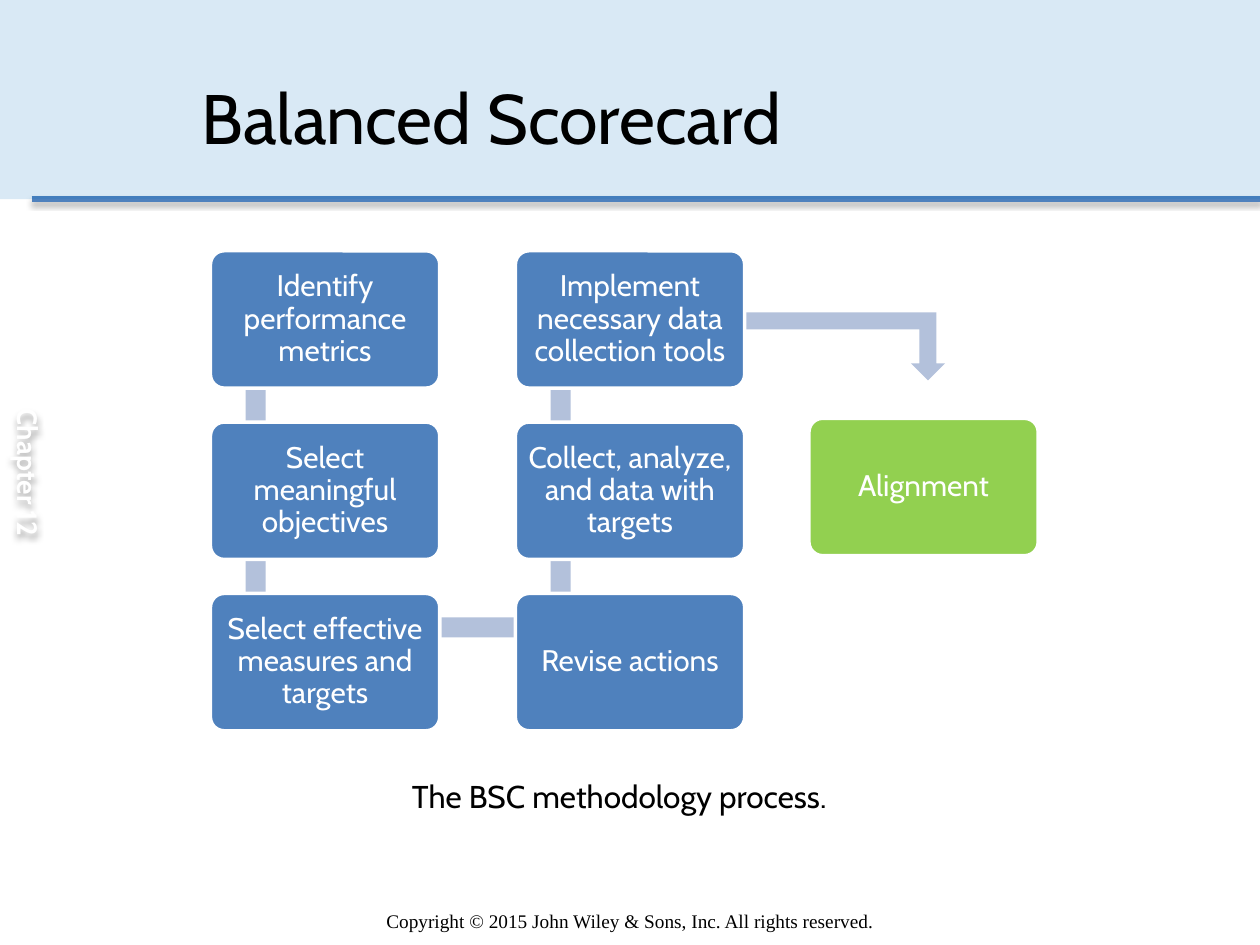
from dataclasses import dataclass

from lxml import etree
from pptx import Presentation
from pptx.dml.color import RGBColor
from pptx.enum import shapes, text
from pptx.oxml import ns
from pptx.util import Inches, Pt


@dataclass(frozen=True)
class Theme:
    font: str = "Cabin"
    footer_font: str = "Times New Roman"
    black: str = "000000"
    white: str = "FFFFFF"
    header: str = "0070C0"
    blue: str = "4F81BD"
    green: str = "92D050"
    link: str = "B3C1DB"
    title_size: float = 40
    caption_size: float = 18
    step_size: float = 17
    chapter_size: float = 16
    footer_size: float = 11


def add_shadow(shape, blur, distance, opacity):
    """Give the shape a black shadow that falls straight down."""
    effects = etree.SubElement(shape._element.spPr, ns.qn("a:effectLst"))
    outer = etree.SubElement(effects, ns.qn("a:outerShdw"), blurRad=str(Pt(blur)),
                             dist=str(Pt(distance)), dir="5400000",
                             algn="ctr", rotWithShape="0")
    color = etree.SubElement(outer, ns.qn("a:srgbClr"), val="000000")
    etree.SubElement(color, ns.qn("a:alpha"), val=str(opacity * 1000))


class SlideBuilder:
    def __init__(self, slide, theme):
        self.slide = slide
        self.theme = theme

    def set_words(self, shape, words, size, color, align, font=None, bold=False):
        frame = shape.text_frame
        frame.word_wrap = True
        frame.text = words
        paragraph = frame.paragraphs[0]
        paragraph.alignment = align
        run_font = paragraph.runs[0].font
        run_font.name = font or self.theme.font
        run_font.size = Pt(size)
        run_font.bold = bold
        run_font.color.rgb = RGBColor.from_string(color)
        return frame

    def label(self, box, words, size, color=None, align=text.PP_ALIGN.CENTER, **style):
        label = self.slide.shapes.add_textbox(*map(Inches, box))
        self.set_words(label, words, size, color or self.theme.black, align, **style)
        return label

    def block(self, box, color, kind=shapes.MSO_SHAPE.RECTANGLE):
        block = self.slide.shapes.add_shape(kind, *map(Inches, box))
        block.shadow.inherit = False
        block.fill.solid()
        block.fill.fore_color.rgb = RGBColor.from_string(color)
        block.line.fill.background()
        return block

    def step(self, box, words, color):
        step = self.block(box, color, shapes.MSO_SHAPE.ROUNDED_RECTANGLE)
        step.adjustments[0] = 0.1
        step.line.color.rgb = RGBColor.from_string(self.theme.white)
        step.line.width = Pt(2)
        frame = self.set_words(step, words, self.theme.step_size, self.theme.white,
                               text.PP_ALIGN.CENTER)
        frame.vertical_anchor = text.MSO_ANCHOR.MIDDLE
        frame.margin_left = frame.margin_right = Inches(0.07)
        frame.margin_top = frame.margin_bottom = Inches(0.07)
        frame.paragraphs[0].line_spacing = 0.9

    def rule(self, left, right, y, color, width):
        rule = self.slide.shapes.add_connector(
            shapes.MSO_CONNECTOR.STRAIGHT, *map(Inches, (left, y, right, y)))
        rule.line.color.rgb = RGBColor.from_string(color)
        rule.line.width = Pt(width)
        add_shadow(rule, 3.1, 1.8, 35)

    def down_arrow(self, box, color):
        """Draw an arrow that runs right and then bends down."""
        arrow = self.block(box, color, shapes.MSO_SHAPE.BENT_UP_ARROW)
        arrow._element.spPr.find(ns.qn("a:xfrm")).set("flipV", "1")

    def side_label(self, box, words):
        """Set words that read downwards along the slide's edge."""
        side = self.label(box, words, self.theme.chapter_size, self.theme.white, bold=True)
        frame = side.text_frame
        frame.vertical_anchor = text.MSO_ANCHOR.MIDDLE
        frame.margin_left = frame.margin_right = 0
        frame.margin_top = frame.margin_bottom = 0
        frame._txBody.bodyPr.set("vert", "vert")
        add_shadow(side, 3.5, 2.2, 32)


def main():
    theme = Theme()
    deck = Presentation()
    deck.slide_width, deck.slide_height = Inches(10), Inches(7.5)
    page = SlideBuilder(deck.slides.add_slide(deck.slide_layouts[6]), theme)

    page.rule(0.25, 10, 1.58, theme.blue, 3)
    header = page.block((0, 0, 10, 1.58), theme.header)
    header_color = header._element.spPr.find(ns.qn("a:solidFill"))[0]
    etree.SubElement(header_color, ns.qn("a:alpha"), val="15000")
    title = page.label((1.5, 0.3, 8, 1.25), "Balanced Scorecard", theme.title_size,
                       align=text.PP_ALIGN.LEFT)
    title.text_frame.vertical_anchor = text.MSO_ANCHOR.MIDDLE
    page.side_label((0.06, 0, 0.33, 7.5), "Chapter 12")

    left, top, width, height = 1.67, 1.99, 1.82, 1.09
    column_pitch, row_pitch = 2.42, 1.36
    link_inset, link_width = 0.28, 0.16
    columns = (
        ("Identify performance metrics", "Select meaningful objectives",
         "Select effective measures and targets"),
        ("Implement necessary data collection tools",
         "Collect, analyze, and data with targets", "Revise actions"),
    )
    # Links lie behind the steps, so only the parts in the gaps show.
    for column in range(2):
        for row in range(2):
            page.block((left + column * column_pitch + link_inset,
                        top + row * row_pitch + link_inset, link_width, 1.35), theme.link)
    page.block((2.04, 4.9, 2.41, link_width), theme.link)
    page.down_arrow((5.55, 2.48, 1.95, 0.54), theme.link)

    for column, steps in enumerate(columns):
        for row, words in enumerate(steps):
            page.step((left + column * column_pitch, top + row * row_pitch, width, height),
                      words, theme.blue)
    page.step((6.42, 3.32, width, height), "Alignment", theme.green)

    page.label((1.5, 6.12, 6.83, 0.4), "The BSC methodology process.", theme.caption_size)
    page.label((0, 7.17, 10, 0.29),
               "Copyright © 2015 John Wiley & Sons, Inc. All rights reserved.",
               theme.footer_size, font=theme.footer_font)
    deck.save("out.pptx")


if __name__ == "__main__":
    main()
